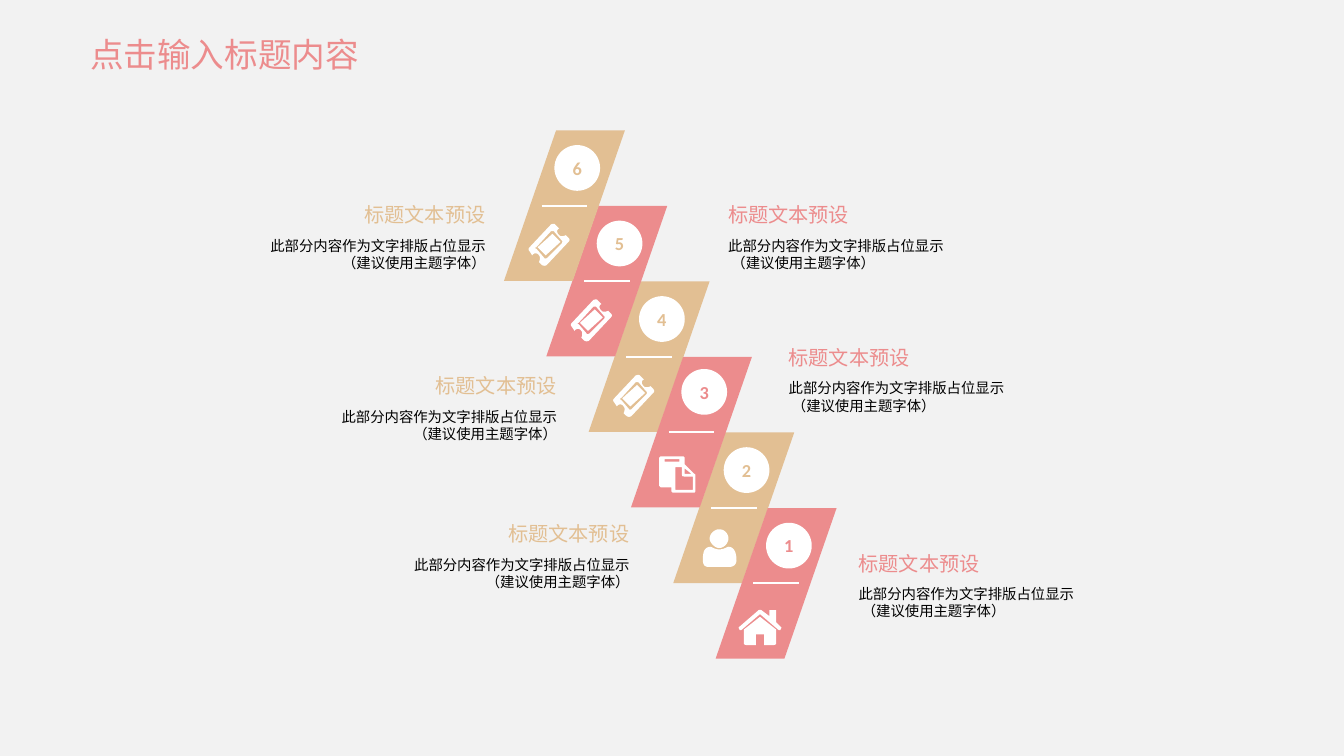
from pptx import Presentation
from pptx.dml.color import RGBColor
from pptx.enum.shapes import MSO_CONNECTOR, MSO_SHAPE
from pptx.enum.text import MSO_ANCHOR, PP_ALIGN
from pptx.oxml.ns import qn
from pptx.util import Inches, Pt
from lxml.etree import SubElement

COLUMNS = 100
SLIDE_WIDTH = Inches(10)
SLIDE_HEIGHT = SLIDE_WIDTH * 9 // 16
ROSE, SAND, WHITE, BLACK, PALE = "EC8C8D", "E2BF93", "FFFFFF", "000000", "F2F2F2"
HEADING = "标题文本预设"
BODY = "此部分内容作为文字排版占位显示\v （建议使用主题字体）"

TICKET = [
    [(14, 30), (13, 31, 11, 31, 10, 30), (8, 28), (9, 26, 9, 24, 8, 23),
     (7, 21, 4, 21, 3, 23), (1, 20), (0, 19, 0, 18, 1, 17), (17, 0),
     (18, -0.5, 20, -0.5, 20, 0), (23, 3), (21, 4, 21, 6, 23, 8),
     (24, 9, 26, 9, 28, 8), (30, 10), (31, 11, 31, 12, 30, 13)],
    [(25, 14), (25.5, 13, 25.5, 12, 25, 12), (19, 5), (18, 5, 17, 5, 17, 5),
     (6, 17), (5, 17, 5, 18, 6, 18), (12, 25), (12, 25.5, 13, 25.5, 14, 25)],
    [(24, 13), (13, 23), (7, 17), (18, 7)],
]
PERSON = [
    [(20, 28), (4, 28), (1, 28, 0, 26, 0, 23), (0, 19, 0, 13, 6, 13),
     (6, 13, 9, 15, 12, 15), (16, 15, 18, 13, 19, 13),
     (24, 13, 25, 19, 25, 23), (25, 26, 23, 28, 20, 28)],
    [(12, 14), (9, 14, 5, 10, 5, 7), (5, 3, 9, 0, 12, 0),
     (16, 0, 19, 3, 19, 7), (19, 10, 16, 14, 12, 14)],
]
CLIPBOARD = [
    [(27, 25), (27, 27, 26, 27, 26, 27), (11, 27), (10, 27, 9, 27, 9, 25),
     (9, 23), (1, 23), (0, 22), (0, 1), (1, 0), (18, 0), (19, 1), (19, 6),
     (26, 13), (27, 13, 27, 14, 27, 15)],
    [(4, 2), (15, 2), (15, 4), (4, 4)],
    [(25, 25), (25, 15), (19, 15), (18, 15, 17, 15, 17, 14), (17, 8), (12, 8), (12, 25)],
    [(24, 13), (19, 9), (19, 13)],
]
HOUSE = [
    [(0, 13), (15, 0), (15.5, -0.2, 16.5, -0.2, 17, 0), (23, 4.5), (23, 0),
     (28, 0), (28, 9), (32, 13), (31, 15), (30, 15), (16, 3), (2, 15), (1, 15)],
    [(28, 25), (28, 25.5, 27, 26, 26, 26), (19, 26), (19, 18), (13, 18),
     (13, 26), (6, 26), (5, 26, 4, 25.5, 4, 25), (4, 14.5), (16, 5), (28, 14.5)],
]


def color(code):
    return RGBColor.from_string(code)


def cell(count):
    return round(count * SLIDE_WIDTH / COLUMNS)


def write(box, text, size, ink, font="Calibri", bold=None, align=PP_ALIGN.LEFT,
          anchor=MSO_ANCHOR.TOP, wrap=True):
    frame = box.text_frame
    frame.word_wrap = wrap
    frame.vertical_anchor = anchor
    para = frame.paragraphs[0]
    para.text = text
    para.alignment = align
    for span in para.runs:
        span.font.size = Pt(size)
        span.font.name = font
        span.font.bold = bold
        span.font.color.rgb = color(ink)


def flatten(contour):
    points = []
    for part in contour:
        if len(part) == 2:
            points.append(part)
            continue
        knots = [points[-1], part[:2], part[2:4], part[4:]]
        for t in (step / 8 for step in range(1, 9)):
            weights = ((1 - t) ** 3, 3 * t * (1 - t) ** 2, 3 * t * t * (1 - t), t ** 3)
            points.append(tuple(sum(w * knot[axis] for w, knot in zip(weights, knots))
                                for axis in (0, 1)))
    return points


class Deck:
    def __init__(self):
        self.deck = Presentation()
        self.deck.slide_width, self.deck.slide_height = SLIDE_WIDTH, SLIDE_HEIGHT
        self.page = self.deck.slides.add_slide(self.deck.slide_layouts[6])
        fill = self.page.background.fill
        fill.solid()
        fill.fore_color.rgb = color(PALE)
        self.shapes = self.page.shapes

    def start_group(self):
        self.shapes = self.page.shapes.add_group_shape().shapes

    def paint(self, shape, fill):
        shape.shadow.inherit = False
        shape.fill.solid()
        shape.fill.fore_color.rgb = color(fill)
        shape.line.fill.background()

    def shape(self, kind, left, top, width, height, fill):
        shape = self.shapes.add_shape(kind, cell(left), cell(top), cell(width), cell(height))
        self.paint(shape, fill)
        return shape

    def line(self, left, top, width):
        line = self.shapes.add_connector(MSO_CONNECTOR.STRAIGHT, cell(left), cell(top),
                                         cell(left + width), cell(top))
        line.line.color.rgb = color(WHITE)
        line.line.width = Pt(1)
        SubElement(line._element.spPr, qn("a:effectLst"))

    def icon(self, contours, left, top):
        outlines = [[(cell(left + x / 10), cell(top + y / 10)) for x, y in flatten(contour)]
                    for contour in contours]
        builder = self.shapes.build_freeform(*outlines[0][0])
        for outline in outlines:
            if outline is not outlines[0]:
                builder.move_to(*outline[0])
            builder.add_line_segments(outline[1:], close=True)
        self.paint(builder.convert_to_shape(), WHITE)

    def text(self, text, left, top, width, height, **style):
        box = self.shapes.add_textbox(cell(left), cell(top), cell(width), cell(height))
        write(box, text, **style)
        return box

    def caption(self, edge, top, ink, align):
        for text, drop, width, height, size, shade, wrap in (
                (HEADING, 0, 11.4, 2.5, 10.8, ink, False),
                (BODY, 2.55, 18.8, 4.9, 7.7, BLACK, True)):
            left = edge - width if align == PP_ALIGN.RIGHT else edge
            self.text(text, left, top + drop, width, height, size=size, ink=shade,
                      align=align, wrap=wrap)

    def step(self, number, icon, icon_offset, badge_drop, edge, caption_top):
        left, top = 37.5 + 3.15 * (6 - number), 9.7 + 5.62 * (6 - number)
        odd = number % 2
        tone = ROSE if odd else SAND
        self.start_group()
        tile = self.shape(MSO_SHAPE.PARALLELOGRAM, left, top, 9, 11.2, tone)
        tile.adjustments[0] = 0.431
        self.line(left + 2.8, top + 5.6, 3.4)
        badge = self.shape(MSO_SHAPE.OVAL, left + 3.75, top + badge_drop, 3.4, 3.4, WHITE)
        write(badge, str(number), size=9.8, ink=SAND if number == 5 else tone, bold=True,
              align=PP_ALIGN.CENTER, anchor=MSO_ANCHOR.MIDDLE, wrap=False)
        self.icon(icon, left + icon_offset[0], top + icon_offset[1])
        self.caption(edge, caption_top, tone, PP_ALIGN.LEFT if odd else PP_ALIGN.RIGHT)

    def title(self, text):
        self.shapes = self.page.shapes
        box = self.text(text, 6.7, 1.9, 23.3, 4.2, size=18, ink=ROSE,
                        font="Noto Sans CJK SC", anchor=MSO_ANCHOR.MIDDLE)
        box.text_frame.margin_left = box.text_frame.margin_right = 0


def main():
    board = Deck()
    for step in (
            (2, PERSON, (2.2, 7.2), 1.1, 47.8, 38.3),
            (4, TICKET, (1.8, 7.0), 1.1, 42.4, 27.3),
            (1, HOUSE, (1.7, 7.6), 1.1, 62.9, 40.5),
            (3, CLIPBOARD, (2.1, 7.4), 0.9, 57.7, 25.2),
            (5, TICKET, (1.8, 7.0), 1.1, 53.2, 14.6),
            (6, TICKET, (1.8, 7.0), 1.1, 37.1, 14.6)):
        board.step(*step)
    board.title("点击输入标题内容")
    board.deck.save("out.pptx")


if __name__ == "__main__":
    main()
